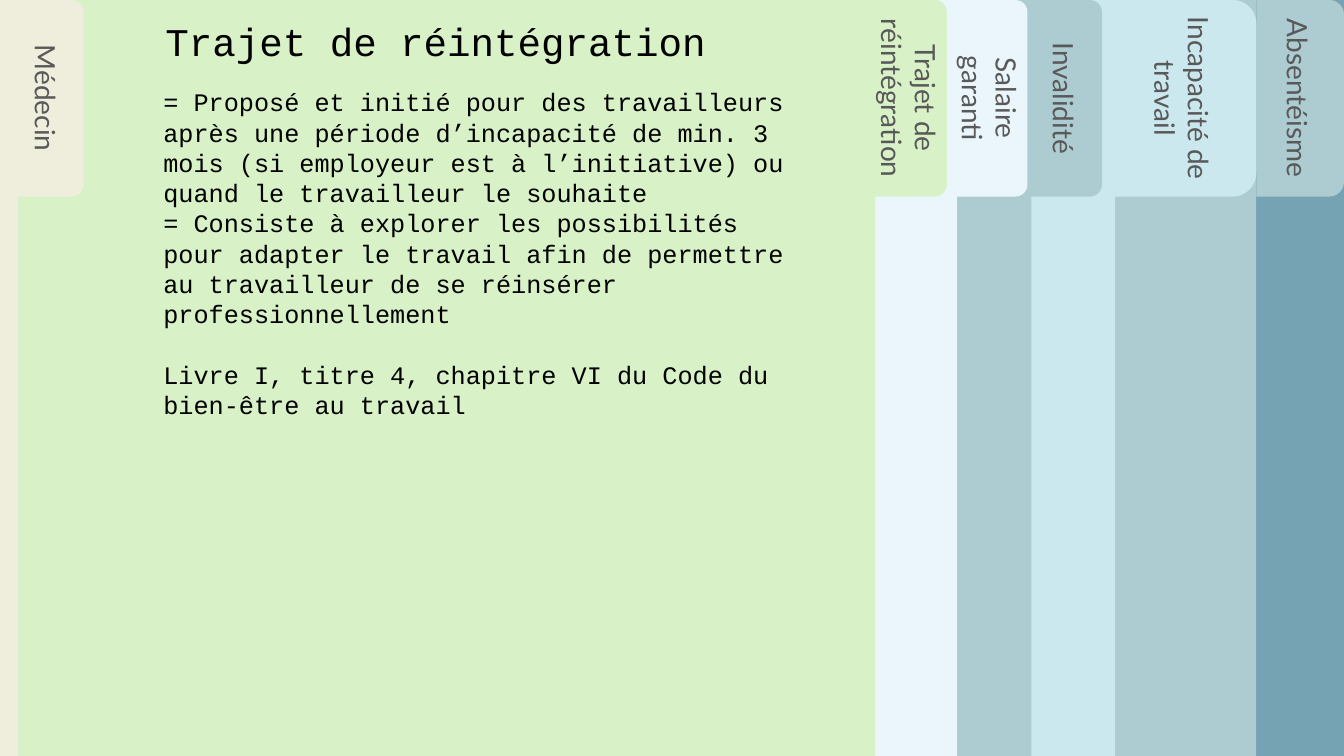
"""Build the divider-tab slide on the reintegration pathway."""
import pptx
import pptx.util
import pptx.dml.color
import pptx.enum.shapes
import pptx.enum.text
import pptx.oxml.ns
import lxml.etree

Inches = pptx.util.Inches
Pt = pptx.util.Pt
SHAPE = pptx.enum.shapes.MSO_SHAPE
ANCHOR = pptx.enum.text.MSO_ANCHOR
ALIGN = pptx.enum.text.PP_ALIGN

COLORS = {
    "slate": "75A3B3",
    "teal": "ACCCD1",
    "aqua": "CCE8EF",
    "ice": "EAF6FC",
    "green": "D8F1C7",
    "cream": "EFEEDD",
    "label": "595959",
    "text": "000000",
}
SLIDE_W, SLIDE_H = 13.33, 7.5
TAB_LENGTH = 1.95
DIVIDERS = [
    ("Absentéisme", 12.46, 12.46, 0.87, "teal"),
    ("Incapacité de travail", 11.06, 11.06, 1.4, "aqua"),
    ("Invalidité", 10.23, 10.21, 0.72, "teal"),
    ("Salaire garanti", 9.49, 9.48, 0.71, "ice"),
    ("Trajet de réintégration", 8.68, 8.68, 0.71, "green"),
    ("Médecin", 0.18, 0.12, 0.71, "cream"),
]
TITLE = "Trajet de réintégration"
BODY = [
    "= Proposé et initié pour des travailleurs après une période d’incapacité "
    "de min. 3 mois (si employeur est à l’initiative) ou quand le travailleur "
    "le souhaite",
    "= Consiste à explorer les possibilités pour adapter le travail afin de "
    "permettre au travailleur de se réinsérer professionnellement",
    "Livre I, titre 4, chapitre VI du Code du bien-être au travail",
]


def rgb(name):
    return pptx.dml.color.RGBColor.from_string(COLORS[name])


def format_runs(p, font, size, color):
    for r in p.runs:
        r.font.name = font
        r.font.size = Pt(size)
        r.font.color.rgb = rgb(color)


def add_block(slide, kind, left, top, width, height, color):
    sp = slide.shapes.add_shape(
        kind, Inches(left), Inches(top), Inches(width), Inches(height))
    sp.shadow.inherit = False
    sp.fill.solid()
    sp.fill.fore_color.rgb = rgb(color)
    sp.line.fill.background()
    return sp


def add_divider(slide, label, page_right, tab_left, tab_width, color):
    add_block(slide, SHAPE.RECTANGLE, 0, 0, page_right, SLIDE_H, color)
    left = tab_left + (tab_width - TAB_LENGTH) / 2
    top = (TAB_LENGTH - tab_width) / 2
    tab = add_block(slide, SHAPE.ROUND_2_SAME_RECTANGLE,
                    left, top, TAB_LENGTH, tab_width, color)
    tab.rotation = 90
    tf = tab.text_frame
    tf.word_wrap = True
    tf.vertical_anchor = ANCHOR.MIDDLE
    tf.text = label
    p = tf.paragraphs[0]
    p.alignment = ALIGN.CENTER
    format_runs(p, "Lato", 20, "label")


def fill_placeholder(sp, box, lines, size):
    sp.left, sp.top, sp.width, sp.height = (Inches(v) for v in box)
    tf = sp.text_frame
    tf.text = "\n".join(lines)
    tf.word_wrap = True
    tf.auto_size = pptx.enum.text.MSO_AUTO_SIZE.NONE
    tf.vertical_anchor = ANCHOR.TOP
    for p in tf.paragraphs:
        pPr = p._p.get_or_add_pPr()
        pPr.set("marL", "0")
        pPr.set("indent", "0")
        lxml.etree.SubElement(pPr, pptx.oxml.ns.qn("a:buNone"))
        p.alignment = ALIGN.LEFT
        p.space_before = Pt(0)
        format_runs(p, "Courier New", size, "text")


def main():
    prs = pptx.Presentation()
    prs.slide_width, prs.slide_height = Inches(SLIDE_W), Inches(SLIDE_H)
    slide = prs.slides.add_slide(prs.slide_layouts[1])
    slide.background.fill.solid()
    slide.background.fill.fore_color.rgb = rgb("slate")
    title, body = slide.placeholders
    for divider in DIVIDERS:
        add_divider(slide, *divider)
    fill_placeholder(title, (1.54, 0.12, 5.7, 0.57), [TITLE], 28)
    fill_placeholder(body, (1.52, 0.81, 6.52, 3.43), BODY, 18)
    body.text_frame.paragraphs[-1].space_before = Pt(21.6)
    for sp in (title, body):
        slide.shapes._spTree.append(sp._element)
    prs.save("out.pptx")


if __name__ == "__main__":
    main()
